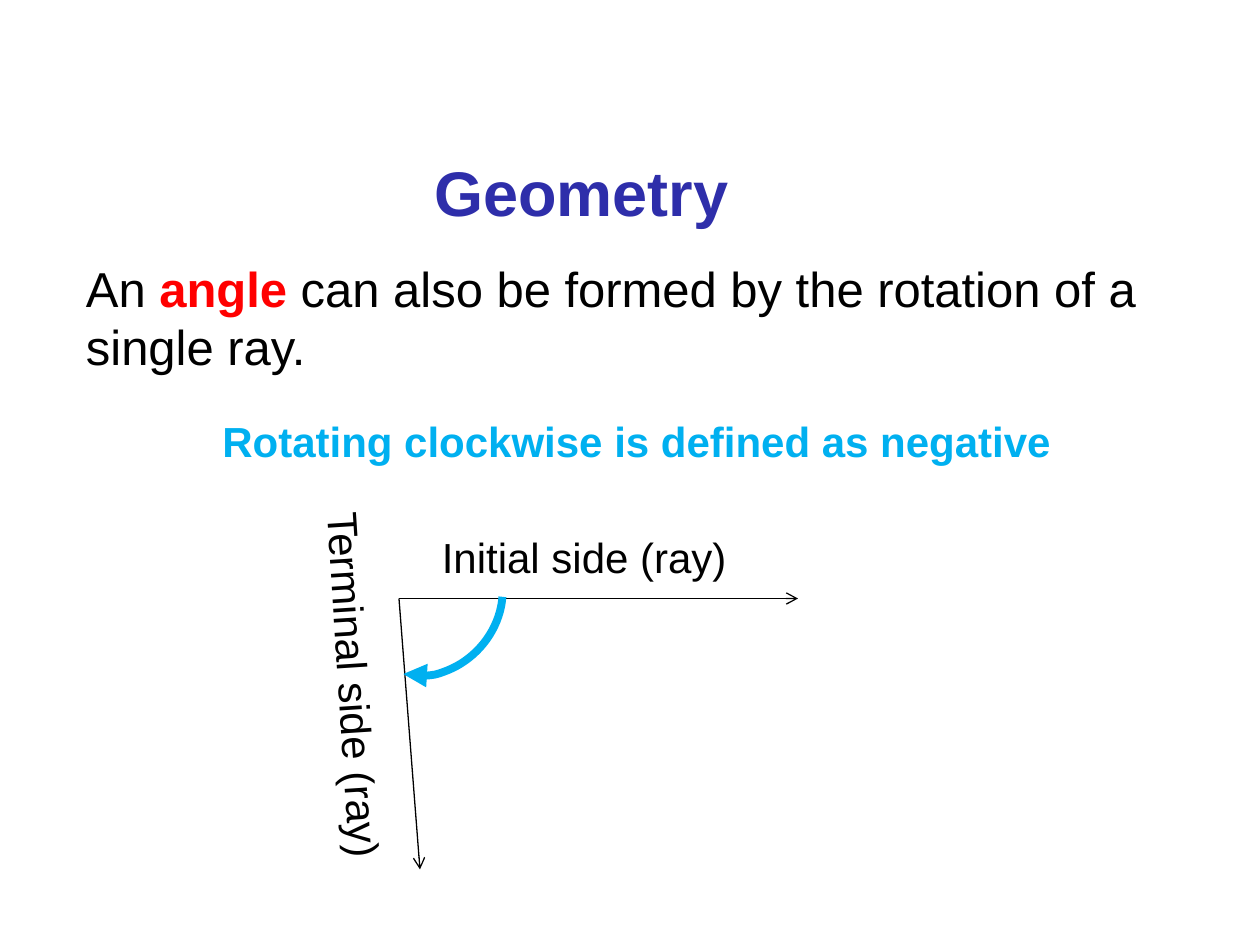
"""Build a slide on negative angles made by clockwise rotation of a ray."""
from lxml import etree
from pptx import Presentation
from pptx.dml.color import RGBColor
from pptx.enum.shapes import MSO_CONNECTOR, MSO_SHAPE
from pptx.enum.text import MSO_AUTO_SIZE, PP_ALIGN
from pptx.oxml.ns import qn
from pptx.util import Inches, Pt

LEFT, CENTER = PP_ALIGN.LEFT, PP_ALIGN.CENTER
FIT, ARC, STRAIGHT = MSO_AUTO_SIZE.SHAPE_TO_FIT_TEXT, MSO_SHAPE.ARC, MSO_CONNECTOR.STRAIGHT
WIDTH, HEIGHT = Inches(10), Inches(7.5)
COLUMNS, ROWS = 120, 90
FONT = "Arial"
BLACK, RED, CYAN, NAVY = "000000", "FF0000", "00B0F0", "2E2EAA"

TEXTS = [
    {"cell": (40, 14, 30.7, 8.5), "size": 36, "align": CENTER,
     "runs": [("Geometry", NAVY, True)]},
    {"cell": (7, 24, 105, 12.5), "size": 28, "wrap": True,
     "runs": [("An ", BLACK, False), ("angle", RED, True),
              (" can also be formed by the rotation of a single ray.", BLACK, False)]},
    {"cell": (20, 39, 82.1, 6), "size": 24,
     "runs": [("Rotating clockwise is defined as negative", CYAN, True)]},
    {"cell": (40.9, 50, 29.9, 6), "size": 24,
     "runs": [("Initial side (ray)", BLACK, False)]},
    {"cell": (16, 62.4, 35.6, 6), "size": 24, "turn": 86.3,
     "runs": [("Terminal side (ray)", BLACK, False)]},
]
VERTEX = (38, 57)
RAY_ENDS = [(76, 57), (40, 82.8)]
ROTATION = {"cell": (33.4, 50.8, 15, 13), "turn": 131.8, "angles": (224.4, 338.1)}


def color(value):
    return RGBColor.from_string(value)


def place(*cell):
    """Turn alternating columns and rows into slide lengths."""
    units = (WIDTH / COLUMNS, HEIGHT / ROWS)
    return [int(value * units[index % 2]) for index, value in enumerate(cell)]


def add_text(page, cell, size, runs, align=LEFT, wrap=False, turn=0):
    box = page.shapes.add_textbox(*place(*cell))
    box.rotation = turn
    frame = box.text_frame
    frame.word_wrap = wrap
    frame.auto_size = FIT
    para = frame.paragraphs[0]
    para.alignment = align
    for text, shade, bold in runs:
        span = para.add_run()
        span.text = text
        span.font.name = FONT
        span.font.size = Pt(size)
        span.font.bold = bold
        span.font.color.rgb = color(shade)


def style_arrow(shape, shade, width, head):
    shape.line.color.rgb = color(shade)
    shape.line.width = Pt(width)
    etree.SubElement(shape.line._get_or_add_ln(), qn("a:tailEnd"), type=head)


def add_ray(page, end):
    ray = page.shapes.add_connector(STRAIGHT, *place(*VERTEX, *end))
    style_arrow(ray, BLACK, 0.75, "arrow")
    etree.SubElement(ray._element.spPr, qn("a:effectLst"))


def add_rotation(page, cell, turn, angles):
    arc = page.shapes.add_shape(ARC, *place(*cell))
    arc.rotation = turn
    for index, angle in enumerate(angles):
        arc.adjustments[index] = angle * 0.6
    arc.fill.background()
    style_arrow(arc, CYAN, 4.5, "triangle")
    arc.shadow.inherit = False


def main():
    deck = Presentation()
    deck.slide_width, deck.slide_height = WIDTH, HEIGHT
    page = deck.slides.add_slide(deck.slide_layouts[6])
    for end in RAY_ENDS:
        add_ray(page, end)
    add_rotation(page, **ROTATION)
    for text in TEXTS:
        add_text(page, **text)
    deck.save("out.pptx")


if __name__ == "__main__":
    main()
